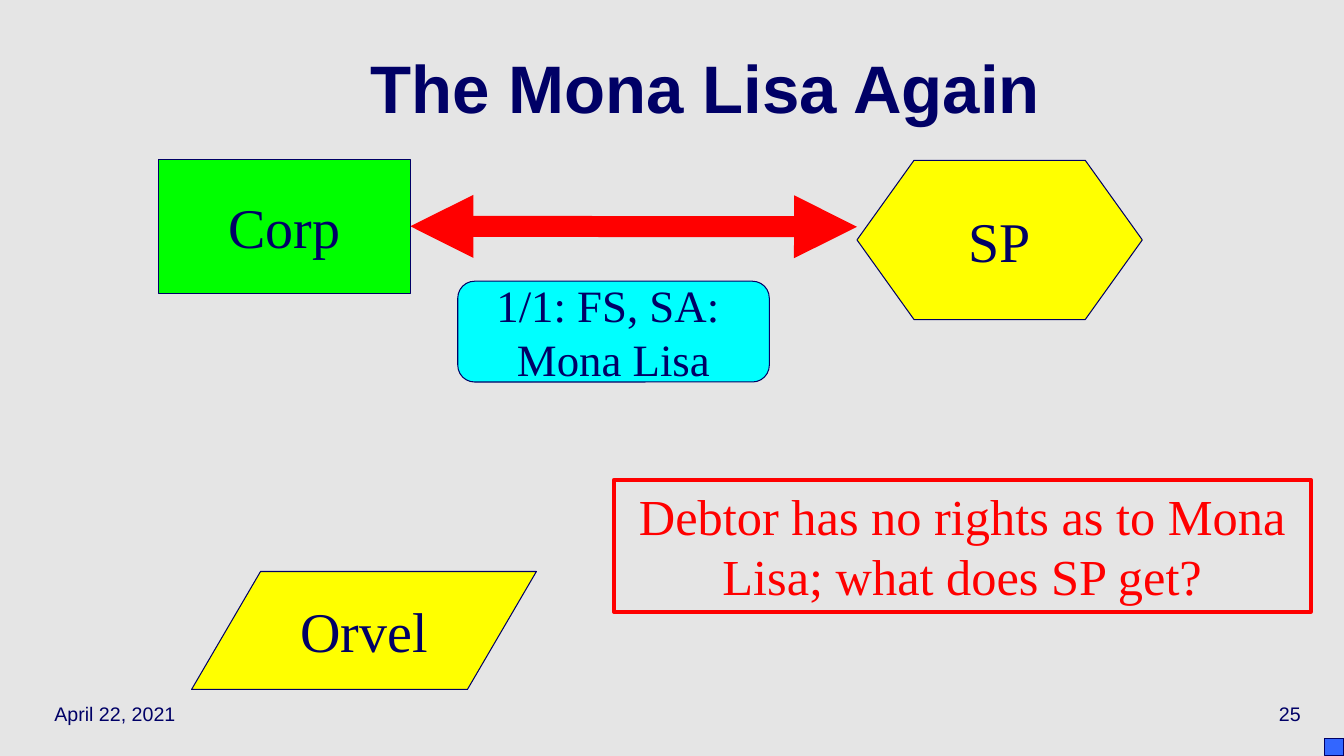
import pptx
import pptx.util
import pptx.dml.color
import pptx.enum.shapes
import pptx.enum.text
import lxml.etree

Inches, Pt = pptx.util.Inches, pptx.util.Pt
SHAPE = pptx.enum.shapes.MSO_SHAPE
ALIGN = pptx.enum.text.PP_ALIGN
ANCHOR = pptx.enum.text.MSO_ANCHOR

COLORS = {"navy": "000066", "yellow": "FFFF00", "green": "00FF00", "cyan": "00FFFF",
          "red": "FF0000", "blue": "3366FF", "background": "E5E5E5"}
SERIF, SANS = "Times New Roman", "Arial"

# left, top, width, height, lines, size, bold, alignment, wrap
TEXTS = [
    (0.44, 6.83, 2.78, 0.5, ["April 22, 2021"], 14, False, ALIGN.LEFT, False),
    (10.22, 6.83, 2.78, 0.5, ["25"], 14, False, ALIGN.RIGHT, False),
    (0.89, 0.33, 12.22, 1.25, ["The Mona Lisa Again"], 48, True, ALIGN.CENTER, True),
]
# name: preset, left, top, width, height, fill, lines, size
PARTIES = {
    "museum": (SHAPE.FLOWCHART_DATA, 1.9, 5.67, 3.42, 1.17, "yellow", ["Orvel"], 40),
    "corp": (SHAPE.FLOWCHART_PROCESS, 1.57, 1.58, 2.5, 1.33, "green", ["Corp"], 40),
    "filing": (SHAPE.FLOWCHART_ALTERNATE_PROCESS, 4.54, 2.79, 3.09, 1, "cyan",
               ["1/1: FS, SA: ", "Mona Lisa"], 32),
    "sp": (SHAPE.FLOWCHART_PREPARATION, 8.5, 1.59, 2.83, 1.58, "yellow", ["SP"], 40),
    "corner": (SHAPE.RECTANGLE, 13.14, 7.33, 0.19, 0.17, "blue", [], 0),
}
QUESTION = ["Debtor has no rights as to Mona Lisa; what does SP get?"]
QUESTION_BOX = (6.09, 4.76, 6.91, 1.31)
ARROW = (4.07, 2.24, 8.5, 2.25)


def rgb(name):
    return pptx.dml.color.RGBColor.from_string(COLORS[name])


def write(sp, lines, size, font, color="navy", bold=False, align=ALIGN.CENTER,
          wrap=False, anchor=ANCHOR.MIDDLE):
    tf = sp.text_frame
    tf.word_wrap = wrap
    tf.vertical_anchor = anchor
    for i, line in enumerate(lines):
        p = tf.add_paragraph() if i else tf.paragraphs[0]
        p.alignment = align
        r = p.add_run()
        r.text = line
        r.font.size = Pt(size)
        r.font.name = font
        r.font.bold = bold
        r.font.color.rgb = rgb(color)
    return tf


def add_box(slide, preset, box, fill, line, width):
    sp = slide.shapes.add_shape(preset, *map(Inches, box))
    sp.shadow.inherit = False
    if fill:
        sp.fill.solid()
        sp.fill.fore_color.rgb = rgb(fill)
    else:
        sp.fill.background()
    sp.line.color.rgb = rgb(line)
    sp.line.width = Pt(width)
    return sp


def add_double_arrow(slide, ends):
    arrow = slide.shapes.add_connector(pptx.enum.shapes.MSO_CONNECTOR.STRAIGHT,
                                       *map(Inches, ends))
    arrow.line.color.rgb = rgb("red")
    arrow.line.width = Pt(15)
    ln = arrow.line._get_or_add_ln()
    for tag in ("headEnd", "tailEnd"):
        lxml.etree.SubElement(ln, pptx.oxml.ns.qn("a:" + tag), type="triangle")
    lxml.etree.SubElement(arrow._element.spPr, pptx.oxml.ns.qn("a:effectLst"))
    return arrow


def main():
    prs = pptx.Presentation()
    prs.slide_width, prs.slide_height = Inches(13.33), Inches(7.5)
    slide = prs.slides.add_slide(prs.slide_layouts[6])
    slide.background.fill.solid()
    slide.background.fill.fore_color.rgb = rgb("background")

    for *box, lines, size, bold, align, wrap in TEXTS:
        sp = slide.shapes.add_textbox(*map(Inches, box))
        tf = write(sp, lines, size, SANS, bold=bold, align=align, wrap=wrap)
        if bold:
            tf.paragraphs[0].line_spacing = 0.7

    question = add_box(slide, SHAPE.RECTANGLE, QUESTION_BOX, None, "red", 3)
    tf = write(question, QUESTION, 36, SERIF, color="red", wrap=True, anchor=ANCHOR.TOP)
    tf.paragraphs[0].space_before = Pt(4)

    arrow = add_double_arrow(slide, ARROW)
    shapes = {}
    for name, (preset, *box, fill, lines, size) in PARTIES.items():
        shapes[name] = add_box(slide, preset, box, fill, "navy", 0.75)
        write(shapes[name], lines, size, SERIF)
    arrow.begin_connect(shapes["corp"], 3)

    prs.save("out.pptx")


if __name__ == "__main__":
    main()
